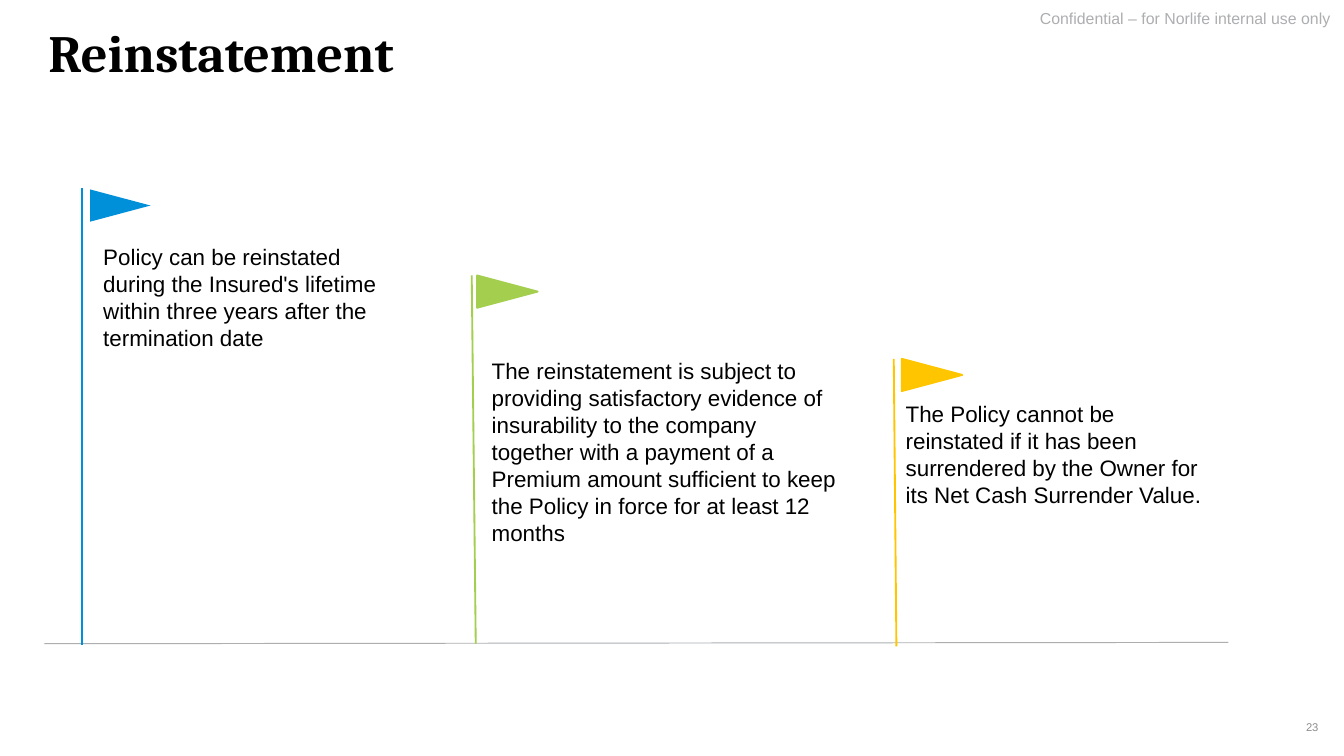
from lxml.etree import SubElement
from pptx import Presentation
from pptx.dml.color import RGBColor as RGB
from pptx.enum.shapes import MSO_CONNECTOR as Link
from pptx.enum.text import MSO_ANCHOR as Anchor, MSO_AUTO_SIZE as Fit, PP_ALIGN as Align
from pptx.oxml.ns import qn
from pptx.util import Inches, Pt

BLACK = RGB(0, 0, 0)
GRAY = RGB(0xAC, 0xAE, 0xB0)
DARK = RGB(0x8C, 0x8C, 0x8C)
BLUE = RGB(0x00, 0x90, 0xDA)
GREEN = RGB(0xA3, 0xCE, 0x4E)
GOLD = RGB(0xFF, 0xC6, 0x00)

STEPS = [
    (BLUE, (0.61, 1.4, 0.61, 4.8), (0.67, 1.41), 0, (0.67, 1.76, 2.27, 0.91),
     "Policy can be reinstated during the Insured's lifetime within three years "
     "after the termination date"),
    (GREEN, (3.51, 2.05, 3.54, 4.79), (3.55, 2.05), 1, (3.56, 2.61, 2.79, 1.51),
     "The reinstatement is subject to providing satisfactory evidence of "
     "insurability to the company together with a payment of a Premium amount "
     "sufficient to keep the Policy in force for at least 12 months"),
    (GOLD, (6.65, 2.67, 6.67, 4.81), (6.71, 2.67), 1, (6.64, 2.93, 2.49, 0.91),
     "The Policy cannot be reinstated if it has been surrendered by the Owner "
     "for its Net Cash Surrender Value."),
]


def write(shape, box, text, size, color, font="Arial", bold=False, align=Align.LEFT,
          pad=(0.1, 0.05), anchor=Anchor.TOP, space=1.0, fit=Fit.NONE):
    shape.left, shape.top, shape.width, shape.height = map(Inches, box)
    frame = shape.text_frame
    frame.word_wrap = True
    frame.auto_size = fit
    frame.vertical_anchor = anchor
    frame.margin_left = frame.margin_right = Inches(pad[0])
    frame.margin_top = frame.margin_bottom = Inches(pad[1])
    para = frame.paragraphs[0]
    para.text = text
    para.alignment = align
    para.line_spacing = space
    para.font.name = font
    para.font.size = Pt(size)
    para.font.bold = bold
    para.font.color.rgb = color


def add_text(slide, box, text, size, color, **style):
    shape = slide.shapes.add_textbox(*map(Inches, box))
    write(shape, box, text, size, color, **style)


def add_line(slide, ends, color, width):
    line = slide.shapes.add_connector(Link.STRAIGHT, *map(Inches, ends))
    line.line.color.rgb = color
    line.line.width = Pt(width)
    SubElement(line._element.spPr, qn("a:effectLst"))


def add_flag(slide, left, top, color, edge):
    pen = slide.shapes.build_freeform(Inches(left), Inches(top))
    pen.add_line_segments([
        (Inches(left + 0.45), Inches(top + 0.12)),
        (Inches(left), Inches(top + 0.24)),
    ])
    flag = pen.convert_to_shape()
    flag.shadow.inherit = False
    flag.fill.solid()
    flag.fill.fore_color.rgb = color
    if edge:
        flag.line.color.rgb = color
        flag.line.width = Pt(edge)
    else:
        flag.line.fill.background()


def main():
    deck = Presentation()
    deck.slide_width = Inches(10)
    deck.slide_height = deck.slide_width * 9 // 16
    slide = deck.slides.add_slide(deck.slide_layouts[5])
    write(slide.shapes.title, (0.29, 0.16, 7.59, 0.54), "Reinstatement", 28, BLACK,
          font="Cambria", bold=True, pad=(0.07, 0.04), space=0.9)
    add_text(slide, (6.94, 0.08, 3.06, 0.17),
             "Confidential – for Norlife internal use only", 8.5, GRAY,
             align=Align.RIGHT, pad=(0.1, 0), space=0.9)
    add_text(slide, (9.14, 5.26, 0.74, 0.3), "23", 6, DARK, align=Align.RIGHT,
             pad=(0.07, 0.04), anchor=Anchor.MIDDLE)
    add_line(slide, (0.33, 4.79, 9.14, 4.78), GRAY, 0.5)
    for color, pole, (left, top), edge, box, text in STEPS:
        add_line(slide, pole, color, 1)
        add_flag(slide, left, top, color, edge)
        add_text(slide, box, text, 12, BLACK, fit=Fit.SHAPE_TO_FIT_TEXT)
    deck.save("out.pptx")


if __name__ == "__main__":
    main()
